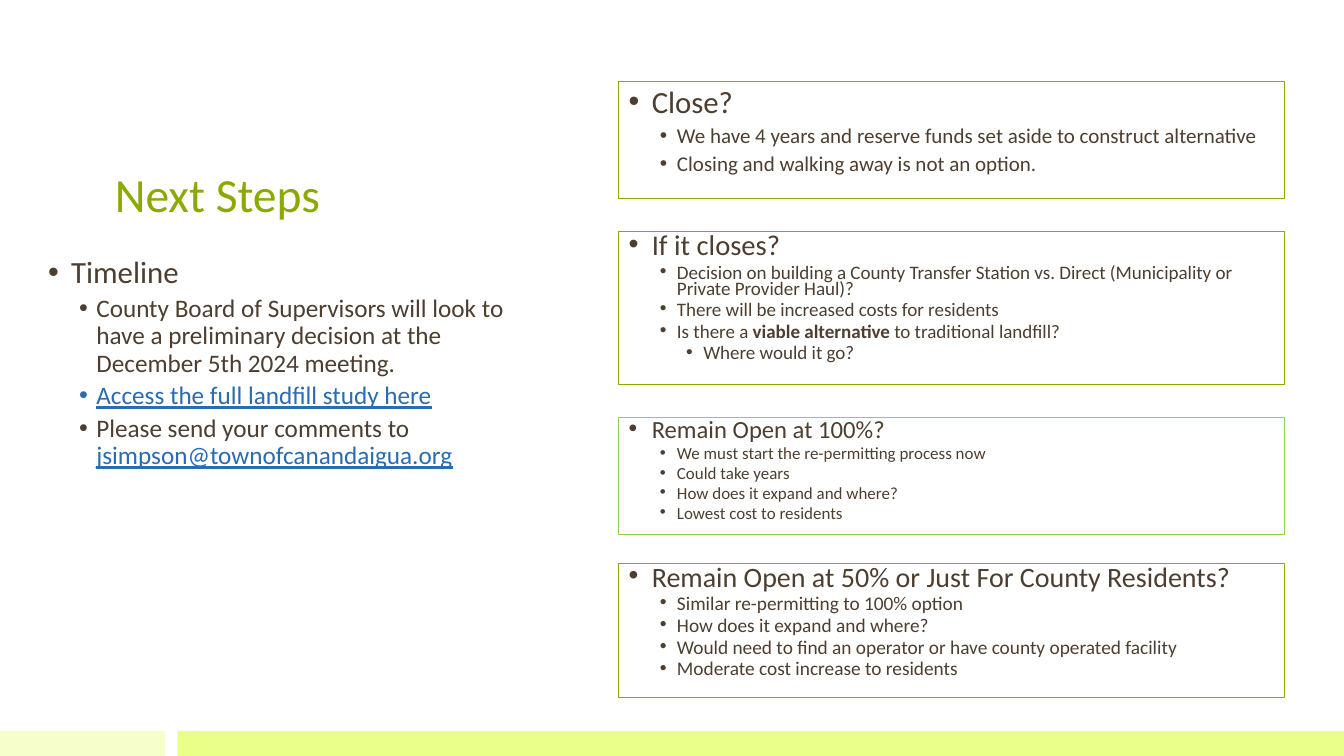
"""Build the Next Steps slide about the future of the landfill."""
from dataclasses import dataclass
from typing import Optional

from lxml import etree
from pptx import Presentation
from pptx import slide as sl
from pptx import util as u
from pptx.dml import color as dml
from pptx.enum import shapes, text
from pptx.oxml import ns
from pptx.shapes import autoshape
from pptx.text import text as tx

GREEN, LIME, BROWN, BLUE = "8BAA00", "92D050", "4D3E2F", "2A6CB2"
INDENTS = ((16.5, 16.5), (34.5, 12.25), (53.25, 12.25))
SPACE_BEFORE = (11, 4, 4)


@dataclass(frozen=True)
class Span:
    words: str
    bold: bool = False
    link: bool = False


@dataclass(frozen=True)
class Item:
    spans: tuple[Span, ...]
    level: int = 1


@dataclass(frozen=True)
class Panel:
    top: float
    height: float
    heading: str
    heading_size: float
    item_size: float
    items: tuple[Item, ...]
    spacing: float = 0.7
    left: float = 442
    width: float = 475.25
    line: Optional[str] = GREEN


@dataclass(frozen=True)
class Bar:
    left: float
    width: float
    fill: str


def plain(*lines: str) -> tuple[Item, ...]:
    """Return one unformatted item for each line."""
    return tuple(Item((Span(line),)) for line in lines)


BARS = (Bar(0, 118, "F6FFCC"), Bar(126.75, 833.25, "E9FF88"))

PANELS = (
    Panel(180, 222.5, "Timeline", 22, 18, (
        *plain("County Board of Supervisors will look to have a preliminary "
               "decision at the December 5th 2024 meeting."),
        Item((Span("Access the full landfill study here", link=True),)),
        Item((Span("Please send your comments to "),
              Span("jsimpson@townofcanandaigua.org", link=True))),
    ), spacing=0.9, left=27.25, width=351.25, line=None),
    Panel(58.25, 83.5, "Close?", 22, 15, plain(
        "We have 4 years and reserve funds set aside to construct alternative",
        "Closing and walking away is not an option.",
    ), spacing=0.9),
    Panel(165.5, 109.5, "If it closes?", 20.4, 13.6, (
        *plain("Decision on building a County Transfer Station vs. Direct "
               "(Municipality or Private Provider Haul)?",
               "There will be increased costs for residents"),
        Item((Span("Is there a "), Span("viable alternative ", bold=True),
              Span("to traditional landfill?"))),
        Item((Span("Where would it go?"),), level=2),
    )),
    Panel(298, 83.5, "Remain Open at 100%?", 17.6, 12.1, plain(
        "We must start the re-permitting process now",
        "Could take years",
        "How does it expand and where?",
        "Lowest cost to residents",
    ), line=LIME),
    Panel(402.5, 95.75, "Remain Open at 50% or Just For County Residents?", 20, 13.8, plain(
        "Similar re-permitting to 100% option",
        "How does it expand and where?",
        "Would need to find an operator or have county operated facility",
        "Moderate cost increase to residents",
    )),
)


def rgb(value: str) -> dml.RGBColor:
    """Turn a hex string into a colour."""
    return dml.RGBColor.from_string(value)


def style_run(run: tx._Run, size: float, color: str) -> None:
    """Set the font, size and colour of a run."""
    run.font.name = "Calibri"
    run.font.size = u.Pt(size)
    run.font.color.rgb = rgb(color)


def add_rectangle(slide: sl.Slide, left: float, top: float, width: float, height: float,
                  fill: Optional[str] = None, line: Optional[str] = None) -> autoshape.Shape:
    """Draw a flat rectangle with an optional fill and outline."""
    shape = slide.shapes.add_shape(shapes.MSO_SHAPE.RECTANGLE,
                                   u.Pt(left), u.Pt(top), u.Pt(width), u.Pt(height))
    shape.shadow.inherit = False
    if fill:
        shape.fill.solid()
        shape.fill.fore_color.rgb = rgb(fill)
    else:
        shape.fill.background()
    if line:
        shape.line.color.rgb = rgb(line)
        shape.line.width = u.Pt(0.75)
    else:
        shape.line.fill.background()
    return shape


def write_item(paragraph: tx._Paragraph, item: Item, size: float, spacing: float) -> None:
    """Write one bulleted paragraph and format its runs."""
    paragraph.text = item.spans[0].words
    for span in item.spans[1:]:
        paragraph.add_run().text = span.words
    for run, span in zip(paragraph.runs, item.spans):
        style_run(run, size, BLUE if span.link else BROWN)
        run.font.bold = span.bold
        run.font.underline = span.link
    paragraph.level = item.level
    paragraph.alignment = text.PP_ALIGN.LEFT
    paragraph.line_spacing = spacing
    paragraph.space_before = u.Pt(SPACE_BEFORE[item.level])
    margin, hanging = INDENTS[item.level]
    properties = paragraph._p.get_or_add_pPr()
    properties.set("marL", str(u.Pt(margin)))
    properties.set("indent", str(-u.Pt(hanging)))
    etree.SubElement(properties, ns.qn("a:buFont")).set("typeface", "Arial")
    etree.SubElement(properties, ns.qn("a:buChar")).set("char", "•")


def add_panel(slide: sl.Slide, panel: Panel) -> None:
    """Draw a panel with its heading and items."""
    box = (panel.left, panel.top, panel.width, panel.height)
    if panel.line:
        shape = add_rectangle(slide, *box, line=panel.line)
    else:
        shape = slide.shapes.add_textbox(*map(u.Pt, box))
    frame = shape.text_frame
    frame.word_wrap = True
    frame.vertical_anchor = text.MSO_ANCHOR.TOP
    heading = Item((Span(panel.heading),), level=0)
    write_item(frame.paragraphs[0], heading, panel.heading_size, panel.spacing)
    for item in panel.items:
        write_item(frame.add_paragraph(), item, panel.item_size, panel.spacing)


def add_title(slide: sl.Slide, words: str) -> None:
    """Write the slide title."""
    shape = slide.shapes.add_textbox(u.Pt(75), u.Pt(111.5), u.Pt(203.75), u.Pt(51))
    frame = shape.text_frame
    frame.word_wrap = True
    frame.vertical_anchor = text.MSO_ANCHOR.BOTTOM
    frame.text = words
    frame.paragraphs[0].line_spacing = 0.9
    style_run(frame.paragraphs[0].runs[0], 34, GREEN)


def main() -> None:
    """Create the presentation and save it."""
    presentation = Presentation()
    presentation.slide_width, presentation.slide_height = u.Pt(960), u.Pt(540)
    slide = presentation.slides.add_slide(presentation.slide_layouts[6])
    for bar in BARS:
        add_rectangle(slide, bar.left, 522, bar.width, 18, fill=bar.fill)
    add_title(slide, "Next Steps")
    for panel in PANELS:
        add_panel(slide, panel)
    presentation.save("out.pptx")


if __name__ == "__main__":
    main()
